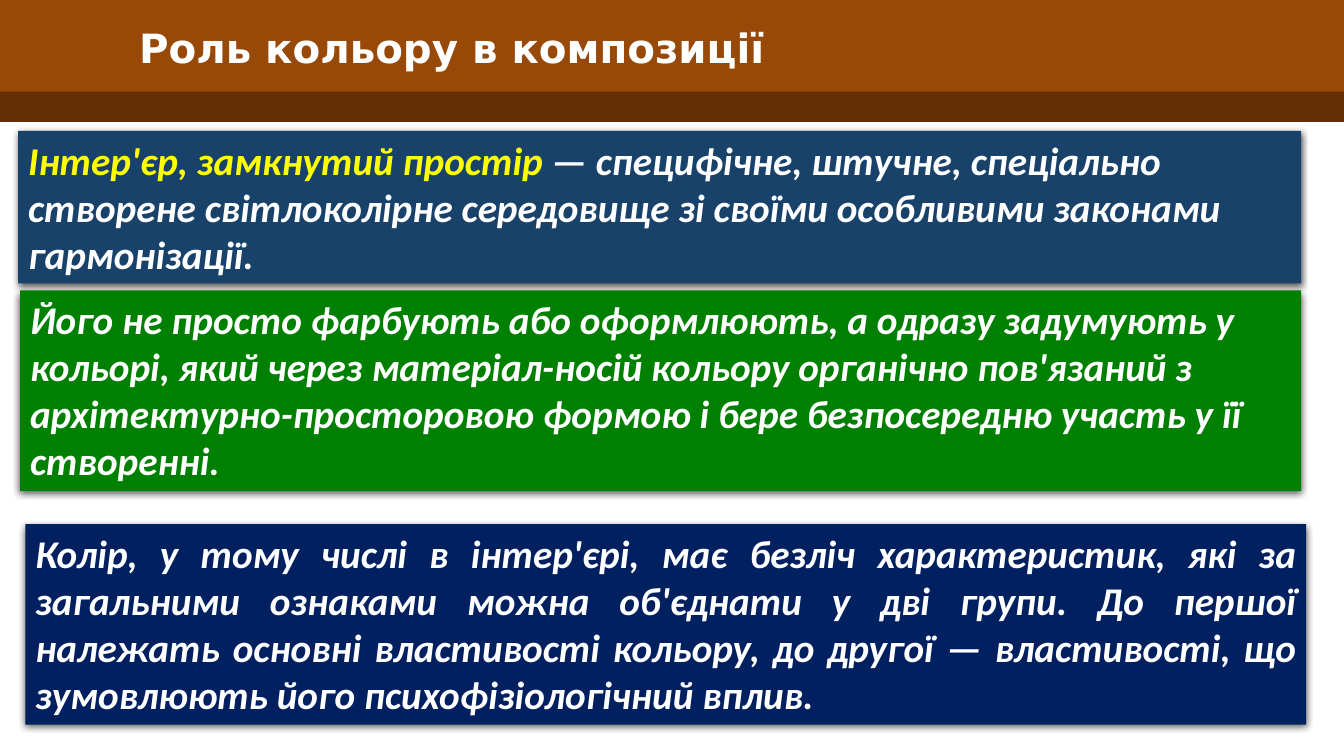
from dataclasses import dataclass

from lxml.etree import SubElement
from pptx import Presentation
from pptx.dml.color import RGBColor
from pptx.enum.shapes import MSO_SHAPE
from pptx.enum.text import MSO_ANCHOR, MSO_AUTO_SIZE, PP_ALIGN
from pptx.oxml.ns import qn
from pptx.util import Cm, Pt


@dataclass(frozen=True)
class Theme:
    band: RGBColor = RGBColor(0x98, 0x48, 0x07)
    band_edge: RGBColor = RGBColor(0x64, 0x2F, 0x04)
    steel: RGBColor = RGBColor(0x19, 0x42, 0x6B)
    green: RGBColor = RGBColor(0x00, 0x80, 0x00)
    navy: RGBColor = RGBColor(0x00, 0x20, 0x60)
    white: RGBColor = RGBColor(0xFF, 0xFF, 0xFF)
    yellow: RGBColor = RGBColor(0xFF, 0xFF, 0x00)
    title_font: str = "DejaVu Sans"
    body_font: str = "Calibri"
    title_size: Pt = Pt(28.8)
    body_size: Pt = Pt(28)


THEME = Theme()
TITLE_FORMAT = {"name": THEME.title_font, "size": THEME.title_size,
                "bold": True, "italic": False}
BODY_FORMAT = {"name": THEME.body_font, "size": THEME.body_size,
               "bold": True, "italic": True}

# Panels: box (left, top, width, height) in cm, fill, alignment, runs
PANELS = [
    ((0.46, 3.3, 32.33, 3.84), THEME.steel, PP_ALIGN.LEFT, [
        ("Інтер'єр, замкнутий простір ", THEME.yellow),
        ("— специфічне, штучне, спеціально створене світлоколірне середовище "
         "зі своїми особливими законами гармонізації.", THEME.white)]),
    ((0.51, 7.32, 32.28, 5.05), THEME.green, PP_ALIGN.LEFT, [
        ("Його не просто фарбують або оформлюють, а одразу задумують у кольорі, "
         "який через матеріал-носій кольору органічно пов'язаний з "
         "архітектурно-просторовою формою і бере безпосередню участь у її "
         "створенні.", THEME.white)]),
    ((0.64, 13.21, 32.28, 5.05), THEME.navy, PP_ALIGN.JUSTIFY, [
        ("Колір, у тому числі в інтер'єрі, має безліч характеристик, які за "
         "загальними ознаками можна об'єднати у дві групи. До першої належать "
         "основні властивості кольору, до другої — властивості, що зумовлюють "
         "його психофізіологічний вплив.", THEME.white)]),
]


def add_run(paragraph, text, color, font_format):
    run = paragraph.add_run()
    run.text = text
    for name, value in font_format.items():
        setattr(run.font, name, value)
    run.font.color.rgb = color


def add_rectangle(slide, box, color):
    shape = slide.shapes.add_shape(MSO_SHAPE.RECTANGLE, *map(Cm, box))
    shape.shadow.inherit = False
    shape.fill.solid()
    shape.fill.fore_color.rgb = color
    shape.line.fill.background()
    return shape


def add_soft_shadow(shape):
    effects = shape.element.spPr.find(qn("a:effectLst"))
    shadow = SubElement(effects, qn("a:outerShdw"), blurRad=str(Pt(4.5)),
                        dist=str(Pt(1.5)), dir="5400000", rotWithShape="0")
    color = SubElement(shadow, qn("a:srgbClr"), val="000000")
    SubElement(color, qn("a:alpha"), val="63000")


def add_header(slide, box, text):
    left, top, width, height = box
    band_height = 2.31
    edge_top = 2.21
    add_rectangle(slide, (left, top + edge_top, width, height - edge_top),
                  THEME.band_edge)
    add_rectangle(slide, (left, top, width, band_height), THEME.band)

    # Title lies in front of the bands
    title = slide.shapes.title
    title.element.getparent().append(title.element)
    title.left, title.top = Cm(left + 3.25), Cm(top + 0.46)
    title.width, title.height = Cm(25.15), Cm(1.47)
    frame = title.text_frame
    frame.vertical_anchor = MSO_ANCHOR.MIDDLE
    frame.auto_size = MSO_AUTO_SIZE.NONE
    paragraph = frame.paragraphs[0]
    paragraph.alignment = PP_ALIGN.LEFT
    add_run(paragraph, text, THEME.white, TITLE_FORMAT)


def add_panel(slide, box, color, alignment, runs):
    shape = add_rectangle(slide, box, color)
    add_soft_shadow(shape)
    frame = shape.text_frame
    frame.word_wrap = True
    frame.auto_size = MSO_AUTO_SIZE.SHAPE_TO_FIT_TEXT
    frame.vertical_anchor = MSO_ANCHOR.TOP
    paragraph = frame.paragraphs[0]
    paragraph.alignment = alignment
    for text, text_color in runs:
        add_run(paragraph, text, text_color, BODY_FORMAT)


def main():
    presentation = Presentation()
    presentation.slide_width = Cm(33.87)
    presentation.slide_height = Cm(19.05)
    slide = presentation.slides.add_slide(presentation.slide_layouts[5])

    add_header(slide, (0, 0, 33.87, 3.07), "Роль кольору в композиції")
    for panel in PANELS:
        add_panel(slide, *panel)

    presentation.save("out.pptx")


if __name__ == "__main__":
    main()
